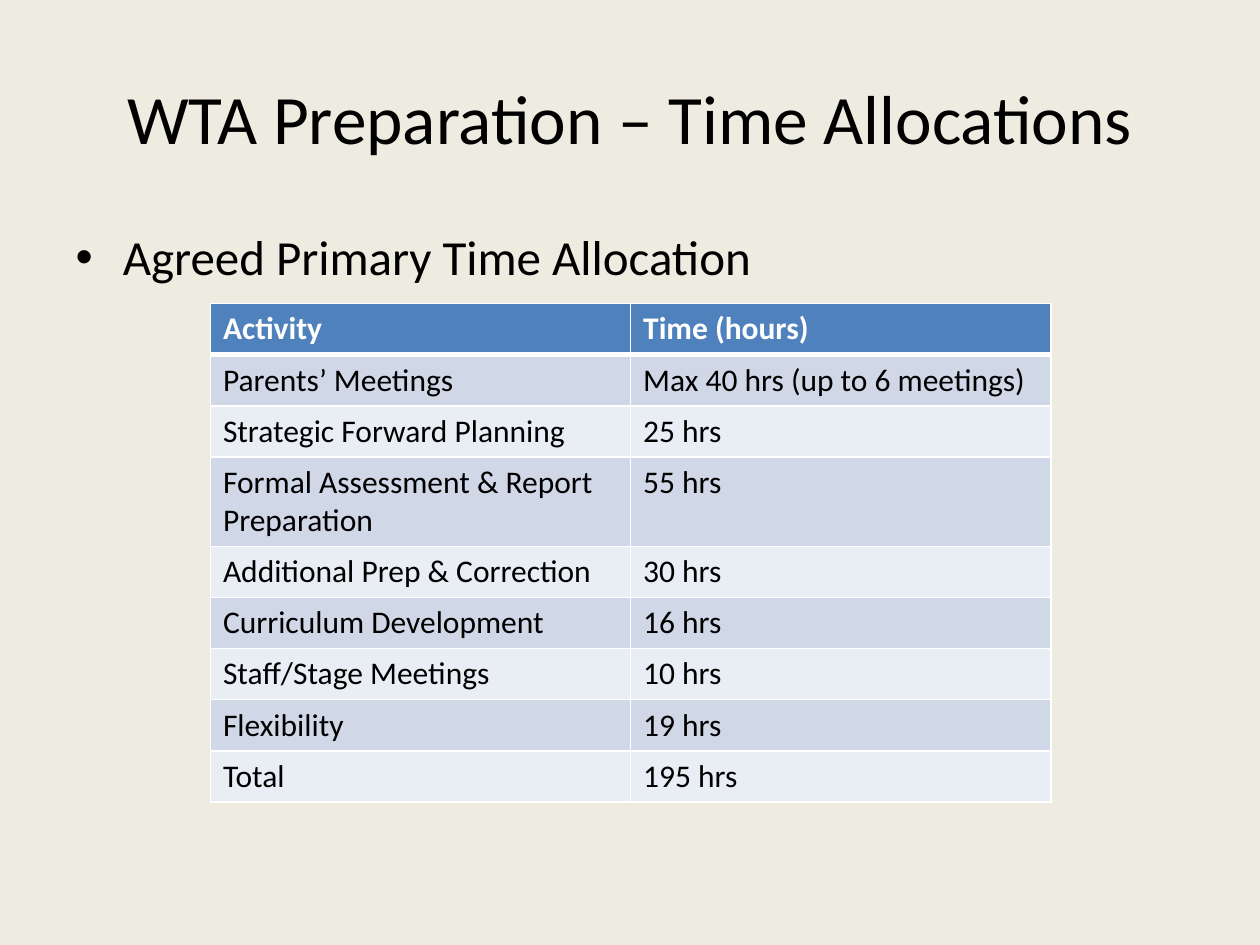
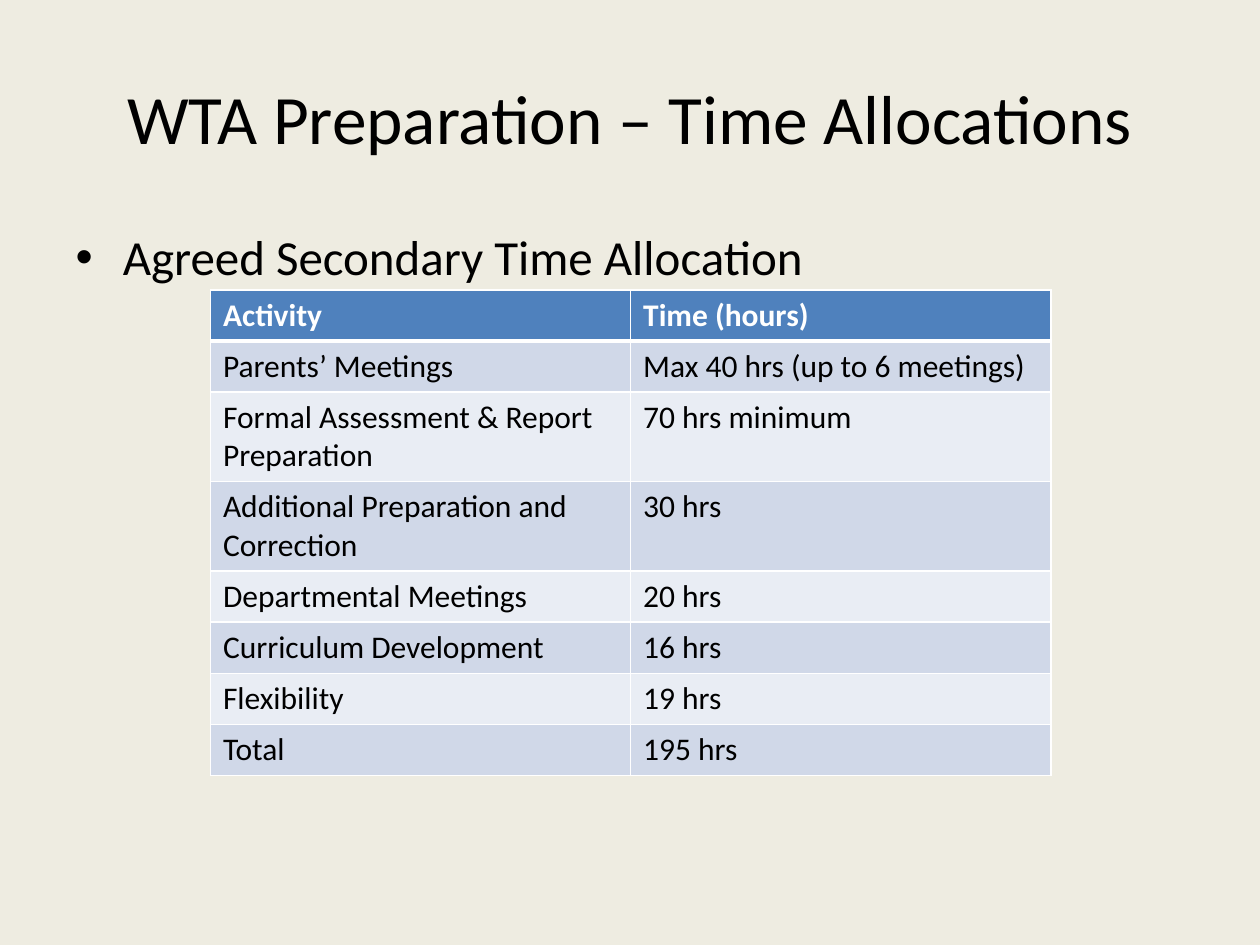
from dataclasses import dataclass

from lxml import etree
from pptx import Presentation
from pptx.dml.color import RGBColor
from pptx.enum.text import MSO_ANCHOR, PP_ALIGN
from pptx.oxml.ns import qn
from pptx.util import Inches, Pt

CENTER = PP_ALIGN.CENTER
MIDDLE = MSO_ANCHOR.MIDDLE

# Shared style
FONT = "Calibri"
BACKGROUND = "EEECE1"
BLACK = "000000"
WHITE = "FFFFFF"
HEADER_FILL = "4F81BD"
BAND_FILLS = ("D0D8E8", "E9EDF4")
THIN, THICK = 1, 3

TITLE = "WTA Preparation – Time Allocations"
HEADER = ("Activity", "Time (hours)")
TABLE_LEFT = 1.67
TABLE_WIDTH = 6.67
ROW_HEIGHT = 0.405
WRAPPED_ROW_HEIGHT = 0.71


@dataclass(frozen=True)
class Allocation:
    activity: str
    hours: str
    wraps: bool = False


@dataclass(frozen=True)
class AllocationSlide:
    heading: str
    table_top: float
    allocations: tuple[Allocation, ...]


PARENTS_MEETINGS = Allocation("Parents’ Meetings", "Max 40 hrs (up to 6 meetings)")
CURRICULUM = Allocation("Curriculum Development", "16 hrs")
FLEXIBILITY = Allocation("Flexibility", "19 hrs")
TOTAL = Allocation("Total", "195 hrs")
ASSESSMENT = "Formal Assessment & Report Preparation"

SLIDES = (
    AllocationSlide("Agreed Primary Time Allocation", 2.41, (
        PARENTS_MEETINGS,
        Allocation("Strategic Forward Planning", "25 hrs"),
        Allocation(ASSESSMENT, "55 hrs", wraps=True),
        Allocation("Additional Prep & Correction", "30 hrs"),
        CURRICULUM,
        Allocation("Staff/Stage Meetings", "10 hrs"),
        FLEXIBILITY,
        TOTAL,
    )),
    AllocationSlide("Agreed Secondary Time Allocation", 2.3, (
        PARENTS_MEETINGS,
        Allocation(ASSESSMENT, "70 hrs minimum", wraps=True),
        Allocation("Additional Preparation and Correction", "30 hrs", wraps=True),
        Allocation("Departmental Meetings", "20 hrs"),
        CURRICULUM,
        FLEXIBILITY,
        TOTAL,
    )),
)


def color(hex_value: str) -> RGBColor:
    return RGBColor.from_string(hex_value)


def style_paragraph(paragraph, size: float, hex_value: str = BLACK, bold: bool = False) -> None:
    font = paragraph.font
    font.name = FONT
    font.size = Pt(size)
    font.bold = bold
    font.color.rgb = color(hex_value)


def fill_placeholder(shape, text: str, top: float, height: float, size: float) -> None:
    shape.left, shape.top = Inches(0.5), Inches(top)
    shape.width, shape.height = Inches(9), Inches(height)
    shape.text_frame.text = text
    style_paragraph(shape.text_frame.paragraphs[0], size)


def set_borders(cell, top: float, bottom: float) -> None:
    properties = cell._tc.get_or_add_tcPr()
    for side, width in (("L", THIN), ("R", THIN), ("T", top), ("B", bottom)):
        line = etree.SubElement(properties, qn(f"a:ln{side}"), w=str(Pt(width)))
        line_fill = etree.SubElement(line, qn("a:solidFill"))
        etree.SubElement(line_fill, qn("a:srgbClr"), val=WHITE)


def add_allocation_table(slide, top: float, allocations: tuple[Allocation, ...]) -> None:
    heights = [ROW_HEIGHT] + [
        WRAPPED_ROW_HEIGHT if item.wraps else ROW_HEIGHT for item in allocations
    ]
    rows = [HEADER] + [(item.activity, item.hours) for item in allocations]
    table = slide.shapes.add_table(
        len(rows), len(HEADER), Inches(TABLE_LEFT), Inches(top),
        Inches(TABLE_WIDTH), Inches(sum(heights)),
    ).table
    for row_index, (texts, height) in enumerate(zip(rows, heights)):
        table.rows[row_index].height = Inches(height)
        is_header = row_index == 0
        fill = HEADER_FILL if is_header else BAND_FILLS[(row_index - 1) % 2]
        for column_index, text in enumerate(texts):
            cell = table.cell(row_index, column_index)
            cell.text = text
            style_paragraph(cell.text_frame.paragraphs[0], 18,
                            WHITE if is_header else BLACK, is_header)
            # The thick rule separates the header from the first row
            set_borders(cell, top=THICK if row_index == 1 else THIN,
                        bottom=THICK if is_header else THIN)
            cell.fill.solid()
            cell.fill.fore_color.rgb = color(fill)


def add_allocation_slide(presentation, content: AllocationSlide) -> None:
    slide = presentation.slides.add_slide(presentation.slide_layouts[1])
    # Title and bulleted heading
    title = slide.shapes.title
    fill_placeholder(title, TITLE, 0.3, 1.25, 39.6)
    title.text_frame.vertical_anchor = MIDDLE
    title.text_frame.paragraphs[0].alignment = CENTER
    fill_placeholder(slide.placeholders[1], content.heading, 1.75, 5.15, 28)
    # Time table
    add_allocation_table(slide, content.table_top, content.allocations)


def main() -> None:
    presentation = Presentation()
    presentation.slide_width = Inches(10)
    presentation.slide_height = Inches(7.5)
    background = presentation.slide_master.background.fill
    background.solid()
    background.fore_color.rgb = color(BACKGROUND)
    for content in SLIDES:
        add_allocation_slide(presentation, content)
    presentation.save("out.pptx")


if __name__ == "__main__":
    main()
